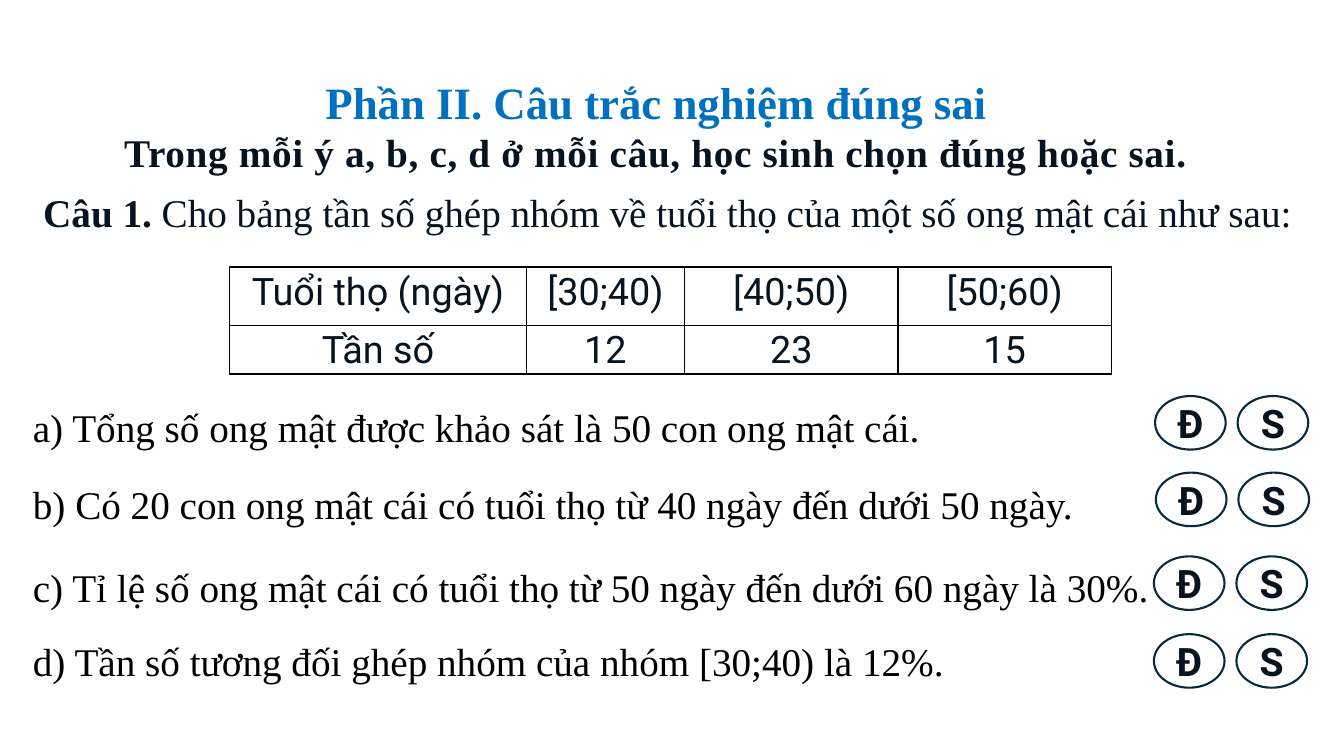
from dataclasses import dataclass

from lxml import etree
from pptx import Presentation
from pptx.dml.color import RGBColor
from pptx.enum import shapes, text
from pptx.oxml import ns
from pptx.util import Cm, Pt

SERIF, SANS = "Times New Roman", "Roboto"
INK, BLACK, BLUE, OUTLINE = "071420", "000000", "0070C0", "092A39"
CENTER = text.PP_ALIGN.CENTER


@dataclass
class Statement:
    wording: str
    top: float
    width: float
    choice_left: float
    choice_top: float


STATEMENTS = [
    Statement("a) Tổng số ong mật được khảo sát là 50 con ong mật cái.",
              10.03, 23.09, 29.11, 9.98),
    Statement("b) Có 20 con ong mật cái có tuổi thọ từ 40 ngày đến dưới 50 ngày.",
              11.99, 26.97, 29.13, 11.91),
    Statement("c) Tỉ lệ số ong mật cái có tuổi thọ từ 50 ngày đến dưới 60 ngày là 30%.",
              14.07, 28.91, 29.08, 14.02),
    Statement("d) Tần số tương đối ghép nhóm của nhóm [30;40) là 12%.",
              15.93, 23.72, 29.08, 15.98),
]
LIFESPANS = [
    ["Tuổi thọ (ngày)", "[30;40)", "[40;50)", "[50;60)"],
    ["Tần số", "12", "23", "15"],
]
COLUMN_WIDTHS = [7.47, 3.99, 5.38, 5.38]
ROW_HEIGHTS = [1.47, 1.14]
CHOICE_STEP = 2.08


def rgb(value: str) -> RGBColor:
    return RGBColor.from_string(value)


def add_run(p, wording: str, size: float = 28, font: str = SERIF,
            color: str = INK, bold: bool = False):
    r = p.add_run()
    r.text = wording
    r.font.size, r.font.name, r.font.bold = Pt(size), font, bold
    r.font.color.rgb = rgb(color)
    return r


def add_line_box(s, left: float, top: float, width: float, height: float):
    """Add an unwrapped text box and return its first paragraph."""
    tf = s.shapes.add_textbox(Cm(left), Cm(top), Cm(width), Cm(height)).text_frame
    tf.word_wrap = False
    return tf.paragraphs[0]


def add_title(s) -> None:
    sp = s.shapes.title
    sp.left, sp.top, sp.width, sp.height = Cm(2.72), Cm(1.75), Cm(27.64), Cm(2.82)
    tf = sp.text_frame
    tf.word_wrap = False
    tf.auto_size = text.MSO_AUTO_SIZE.SHAPE_TO_FIT_TEXT
    tf.vertical_anchor = text.MSO_ANCHOR.TOP
    heading, instruction = tf.paragraphs[0], tf.add_paragraph()
    heading.alignment = instruction.alignment = CENTER
    add_run(heading, "Phần II. Câu trắc nghiệm đúng sai", 32, color=BLUE, bold=True)
    r = add_run(instruction,
                "Trong mỗi ý a, b, c, d ở mỗi câu, học sinh chọn đúng hoặc sai.",
                bold=True)
    r.font._element.set("spc", "50")


def add_borders(cell) -> None:
    """Draw thin black lines on all four sides; call before setting the fill."""
    tc_pr = cell._tc.get_or_add_tcPr()
    for side in ("lnL", "lnR", "lnT", "lnB"):
        ln = etree.SubElement(tc_pr, ns.qn(f"a:{side}"), w=str(Pt(1)))
        fill = etree.SubElement(ln, ns.qn("a:solidFill"))
        etree.SubElement(fill, ns.qn("a:srgbClr"), val=BLACK)


def add_lifespan_table(s) -> None:
    table = s.shapes.add_table(
        len(ROW_HEIGHTS), len(COLUMN_WIDTHS), Cm(5.79), Cm(6.73),
        Cm(sum(COLUMN_WIDTHS)), Cm(sum(ROW_HEIGHTS))).table
    table.first_row = table.horz_banding = False
    for column, width in zip(table.columns, COLUMN_WIDTHS):
        column.width = Cm(width)
    for row, height, values in zip(table.rows, ROW_HEIGHTS, LIFESPANS):
        row.height = Cm(height)
        for cell, value in zip(row.cells, values):
            cell.margin_left = cell.margin_right = Cm(0.36)
            cell.margin_top = cell.margin_bottom = 0
            add_borders(cell)
            cell.fill.background()
            p = cell.text_frame.paragraphs[0]
            p.alignment, p.line_spacing, p.space_after = CENTER, 1.07, Pt(8)
            add_run(p, value, 27, SANS)


def add_choice(s, letter: str, left: float, top: float) -> None:
    sp = s.shapes.add_shape(shapes.MSO_SHAPE.OVAL, Cm(left), Cm(top), Cm(1.78), Cm(1.35))
    sp.shadow.inherit = False
    sp.fill.background()
    sp.line.color.rgb = rgb(OUTLINE)
    sp.line.width = Pt(1.5)
    tf = sp.text_frame
    tf.vertical_anchor = text.MSO_ANCHOR.MIDDLE
    p = tf.paragraphs[0]
    p.alignment = CENTER
    add_run(p, letter, font=SANS, bold=True)


def add_statement(s, statement: Statement) -> None:
    p = add_line_box(s, 0.58, statement.top, statement.width, 1.45)
    add_run(p, statement.wording, color=BLACK)
    for i, letter in enumerate("ĐS"):
        add_choice(s, letter, statement.choice_left + i * CHOICE_STEP,
                   statement.choice_top)


def main() -> None:
    prs = Presentation()
    prs.slide_width, prs.slide_height = Cm(33.87), Cm(19.05)
    s = prs.slides.add_slide(prs.slide_layouts[5])
    add_title(s)
    p = add_line_box(s, 0.84, 4.62, 32.13, 2.24)
    add_run(p, "Câu 1.", bold=True)
    add_run(p, " Cho bảng tần số ghép nhóm về tuổi thọ của một số ong mật cái như sau:")
    add_lifespan_table(s)
    for statement in STATEMENTS:
        add_statement(s, statement)
    prs.save("out.pptx")


if __name__ == "__main__":
    main()
